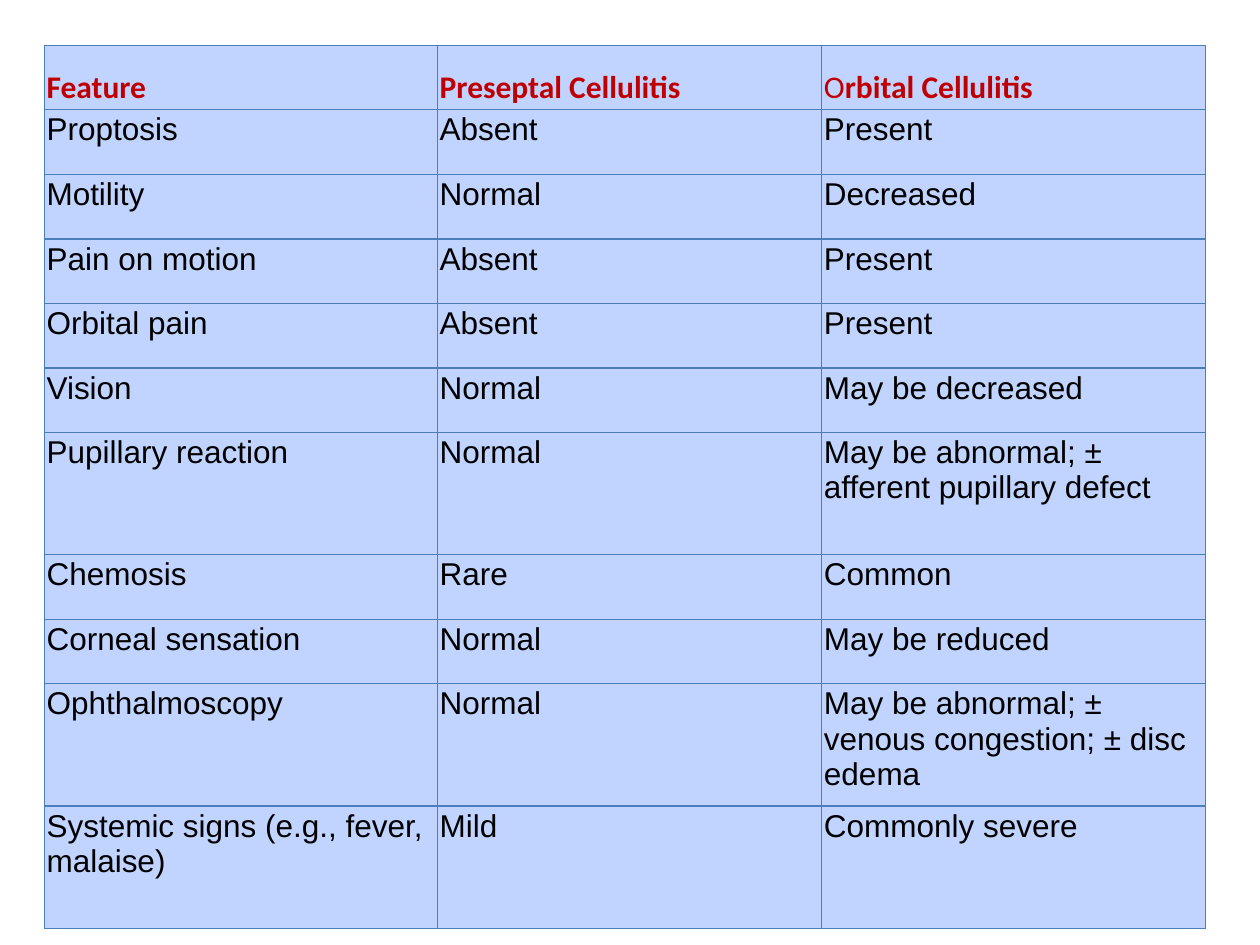
import pptx
import pptx.util
import pptx.dml.color
import pptx.enum.text
import pptx.oxml
import pptx.oxml.ns
from pptx.util import Inches

COLORS = {"fill": "C0D4FF", "line": "4B7EBC", "head": "C00000", "text": "000000"}
HEADS = [["Feature"], ["Preseptal Cellulitis"], ["O", "rbital Cellulitis"]]
SIGNS = [
    ("Proptosis", "Absent", "Present"),
    ("Motility", "Normal", "Decreased"),
    ("Pain on motion", "Absent", "Present"),
    ("Orbital pain", "Absent", "Present"),
    ("Vision", "Normal", "May be decreased"),
    ("Pupillary reaction", "Normal", "May be abnormal; ± afferent pupillary defect"),
    ("Chemosis", "Rare", "Common"),
    ("Corneal sensation", "Normal", "May be reduced"),
    ("Ophthalmoscopy", "Normal", "May be abnormal; ± venous congestion; ± disc edema"),
    ("Systemic signs (e.g., fever, malaise)", "Mild", "Commonly severe"),
]
WIDTHS = [3.12, 3.05, 3.05]
TALL_ROWS = {6, 9, 10}
TALL = 0.97


def color(name):
    return pptx.dml.color.RGBColor.from_string(COLORS[name])


def border(cell):
    props = cell._tc.get_or_add_tcPr()
    for place, side in enumerate(("lnL", "lnR", "lnT", "lnB")):
        line = pptx.oxml.parse_xml(
            f'<a:{side} {pptx.oxml.ns.nsdecls("a")} w="{pptx.util.Pt(0.75)}">'
            f'<a:solidFill><a:srgbClr val="{COLORS["line"]}"/></a:solidFill></a:{side}>'
        )
        props.insert(place, line)


def style(cell, head):
    cell.margin_left = cell.margin_right = Inches(0.02)
    cell.margin_top = cell.margin_bottom = Inches(0.02)
    anchor = pptx.enum.text.MSO_ANCHOR
    cell.vertical_anchor = anchor.BOTTOM if head else anchor.TOP
    cell.fill.solid()
    cell.fill.fore_color.rgb = color("fill")
    border(cell)
    font = cell.text_frame.paragraphs[0].font
    font.size = pptx.util.Pt(18)
    font.name = "Calibri" if head else "Arial"
    font.bold = head
    font.color.rgb = color("head" if head else "text")


def compare(slide, left, top, width, height):
    rows = [HEADS] + [[[text] for text in sign] for sign in SIGNS]
    table = slide.shapes.add_table(
        len(rows), len(WIDTHS), Inches(left), Inches(top), Inches(width), Inches(height)
    ).table
    table.first_row = False
    table.horz_banding = False
    for column, size in zip(table.columns, WIDTHS):
        column.width = Inches(size)
    short = (height - TALL * len(TALL_ROWS)) / (len(rows) - len(TALL_ROWS))
    for r, row in enumerate(rows):
        table.rows[r].height = Inches(TALL if r in TALL_ROWS else short)
        for c, parts in enumerate(row):
            cell = table.cell(r, c)
            para = cell.text_frame.paragraphs[0]
            for part in parts:
                para.add_run().text = part
            style(cell, r == 0)
            if len(parts) > 1:
                para.runs[0].font.bold = False


def main():
    deck = pptx.Presentation()
    deck.slide_width = Inches(10)
    deck.slide_height = Inches(7.5)
    slide = deck.slides.add_slide(deck.slide_layouts[6])
    compare(slide, 0.35, 0.36, sum(WIDTHS), 7.01)
    deck.save("out.pptx")


if __name__ == "__main__":
    main()
